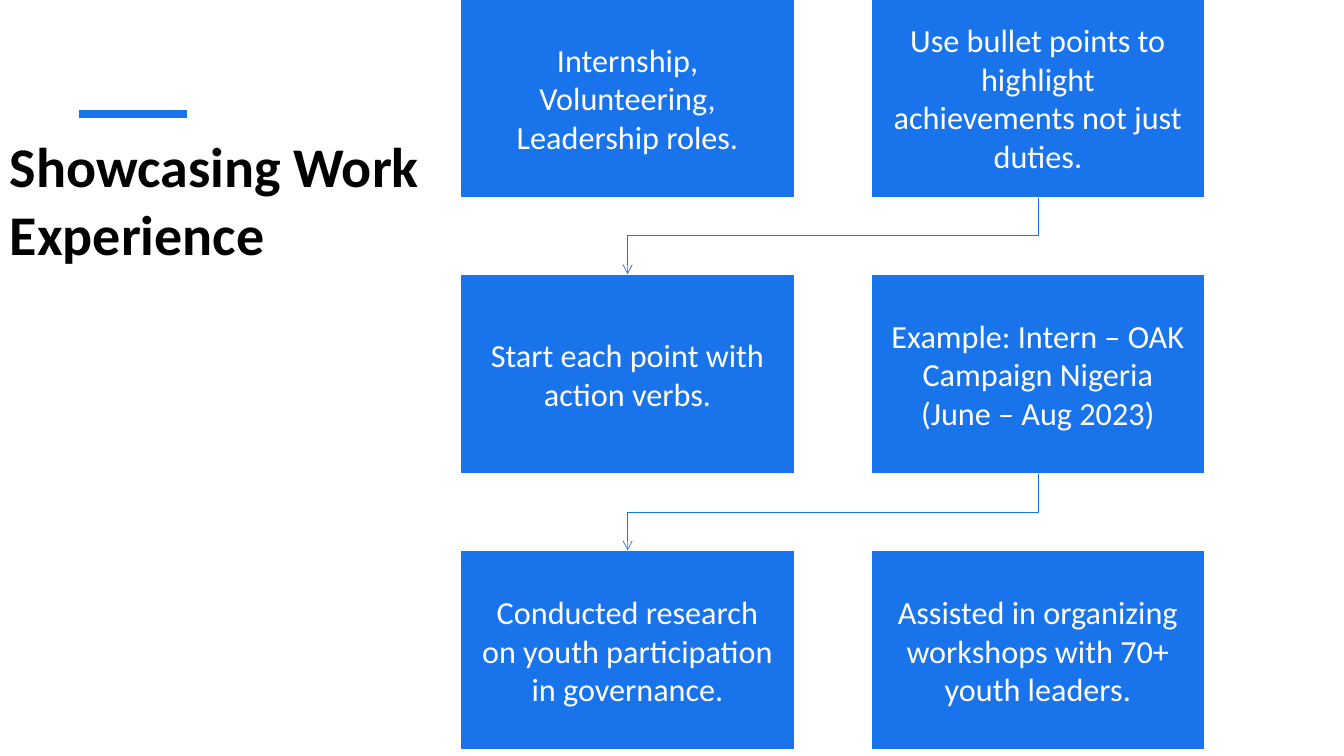
"""Builds the slide on showcasing work experience: a title beside a grid of linked boxes."""
from lxml.etree import SubElement
from pptx import Presentation
from pptx.dml.color import RGBColor
from pptx.enum.shapes import MSO_CONNECTOR, MSO_SHAPE
from pptx.enum.text import MSO_ANCHOR, PP_ALIGN
from pptx.oxml.ns import qn
from pptx.util import Inches, Pt

THEME = {
    "font": "Calibri",
    "blue": RGBColor(0x19, 0x73, 0xEB),
    "white": RGBColor(0xFF, 0xFF, 0xFF),
    "black": RGBColor(0, 0, 0),
    "title": Pt(40),
    "body": Pt(23),
}
LEFT, TOP = 4.57, -0.02
BOX_W, BOX_H = 3.31, 1.98
COL_STEP, ROW_STEP = 4.07, 2.74
ROWS = [
    ("Internship, Volunteering, Leadership roles.",
     "Use bullet points to highlight achievements not just duties."),
    ("Start each point with action verbs.",
     "Example: Intern – OAK Campaign Nigeria (June – Aug 2023)"),
    ("Conducted research on youth participation in governance.",
     "Assisted in organizing workshops with 70+ youth leaders."),
]


def write(sp, text, size, color, bold=False, align=PP_ALIGN.LEFT,
          anchor=MSO_ANCHOR.TOP, inset=(0.1, 0.05)):
    tf = sp.text_frame
    tf.word_wrap = True
    tf.vertical_anchor = anchor
    tf.margin_left = tf.margin_right = Inches(inset[0])
    tf.margin_top = tf.margin_bottom = Inches(inset[1])
    p = tf.paragraphs[0]
    p.alignment = align
    r = p.add_run()
    r.text = text
    r.font.name = THEME["font"]
    r.font.size = THEME[size]
    r.font.bold = bold
    r.font.color.rgb = THEME[color]


prs = Presentation()
prs.slide_width, prs.slide_height = Inches(13.33), Inches(7.5)
s = prs.slides.add_slide(prs.slide_layouts[6])

title = s.shapes.add_textbox(0, Inches(1.26), Inches(4.63), Inches(4.53))
write(title, "Showcasing Work Experience", "title", "black", bold=True)

accent = s.shapes.add_connector(
    MSO_CONNECTOR.STRAIGHT, Inches(0.78), Inches(1.13), Inches(1.85), Inches(1.13))
accent.line.color.rgb = THEME["blue"]
accent.line.width = Pt(6)
SubElement(accent.element.spPr, qn("a:effectLst"))

for row, texts in enumerate(ROWS):
    y = TOP + row * ROW_STEP
    for col, text in enumerate(texts):
        sp = s.shapes.add_shape(
            MSO_SHAPE.RECTANGLE, Inches(LEFT + col * COL_STEP), Inches(y),
            Inches(BOX_W), Inches(BOX_H))
        sp.shadow.inherit = False
        sp.fill.solid()
        sp.fill.fore_color.rgb = THEME["blue"]
        sp.line.color.rgb = THEME["white"]
        sp.line.width = Pt(1)
        write(sp, text, "body", "white", align=PP_ALIGN.CENTER,
              anchor=MSO_ANCHOR.MIDDLE, inset=(0.16, 0.17))

for row in range(len(ROWS) - 1):
    start, end = TOP + row * ROW_STEP + BOX_H, TOP + (row + 1) * ROW_STEP
    middle = (start + end) / 2
    x_left = LEFT + BOX_W / 2
    x_right = x_left + COL_STEP
    elbow = s.shapes.build_freeform(Inches(x_right), Inches(start))
    elbow.add_line_segments(
        [(Inches(x), Inches(y)) for x, y in
         ((x_right, middle), (x_left, middle), (x_left, end))], close=False)
    sp = elbow.convert_to_shape()
    sp.shadow.inherit = False
    sp.fill.background()
    sp.line.color.rgb = THEME["blue"]
    sp.line.width = Pt(0.5)
    SubElement(sp.line._get_or_add_ln(), qn("a:tailEnd"), type="arrow")

prs.save("out.pptx")
